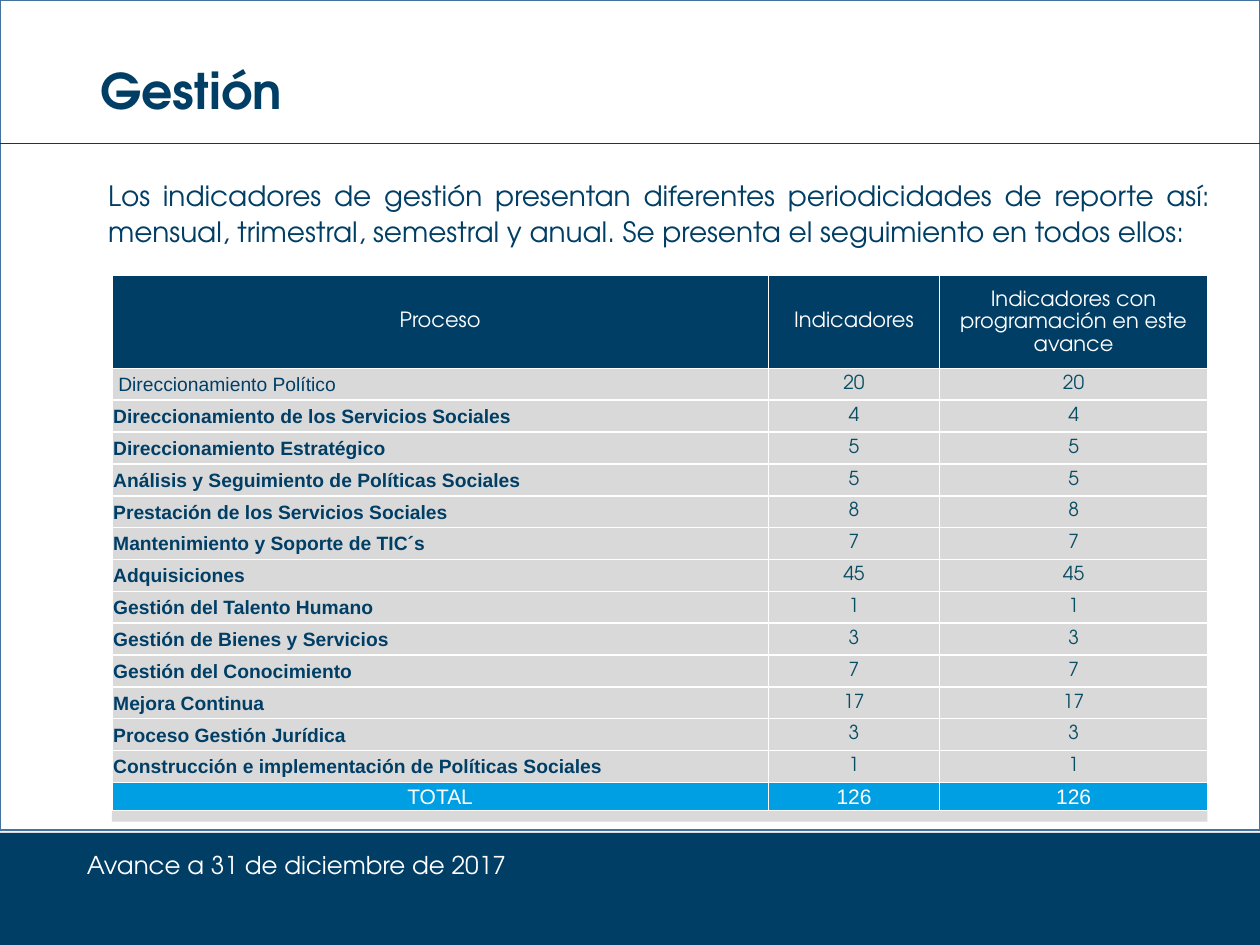
import pptx
import pptx.dml.color
import pptx.enum.shapes
import pptx.enum.text
import pptx.oxml.ns
import pptx.util
from lxml import etree

Pt = pptx.util.Pt
ALIGN = pptx.enum.text.PP_ALIGN
MIDDLE = pptx.enum.text.MSO_ANCHOR.MIDDLE
NAVY, TEAL, BLUE, GREY, WHITE = "003E65", "094D63", "009FE3", "D9D9D9", "FFFFFF"
FONT = "TeX Gyre Adventor"


def paint(target, color):
    """Set a solid fill, or none when no colour is given."""
    if color is None:
        target.background()
        return
    target.solid()
    target.fore_color.rgb = pptx.dml.color.RGBColor.from_string(color)


def write(frame, text, size=12, font=FONT, color=NAVY, bold=False,
          align="LEFT", space=1.0):
    para = frame.paragraphs[0]
    para.alignment = getattr(ALIGN, align)
    para.line_spacing = space
    run = para.add_run()
    run.text = text
    run.font.size = Pt(size)
    run.font.name = font
    run.font.bold = bold
    paint(run.font.fill, color)


class Page:
    def __init__(self, deck):
        self.slide = deck.slides.add_slide(deck.slide_layouts[6])
        self.shapes = self.slide.shapes

    def rect(self, x, y, w, h, fill, line=None):
        kind = pptx.enum.shapes.MSO_SHAPE.RECTANGLE
        shape = self.shapes.add_shape(kind, Pt(x), Pt(y), Pt(w), Pt(h))
        shape.shadow.inherit = False
        paint(shape.fill, fill)
        paint(shape.line.fill, line)
        if line:
            shape.line.width = Pt(1)

    def text(self, x, y, w, h, text, anchor=None, **style):
        frame = self.shapes.add_textbox(Pt(x), Pt(y), Pt(w), Pt(h)).text_frame
        frame.word_wrap = True
        if anchor is not None:
            frame.vertical_anchor = anchor
        write(frame, text, **style)

    def rule(self, x1, y1, x2, y2, color):
        kind = pptx.enum.shapes.MSO_CONNECTOR.STRAIGHT
        line = self.shapes.add_connector(kind, Pt(x1), Pt(y1), Pt(x2), Pt(y2))
        paint(line.line.fill, color)
        line.line.width = Pt(1)
        props = line._element.spPr
        etree.SubElement(props, pptx.oxml.ns.qn("a:effectLst"))

    def table(self, x, y, cols, rows):
        grid = self.shapes.add_table(len(rows), len(cols), Pt(x), Pt(y),
                                     Pt(sum(cols)), Pt(sum(rows))).table
        grid.first_row = grid.horz_banding = False
        for col, width in zip(grid.columns, cols):
            col.width = Pt(width)
        for row, height in zip(grid.rows, rows):
            row.height = Pt(height)
        return grid

    def cell(self, cell, text, fill=None, pad=0.7, sides="LRTB", **style):
        cell.margin_left = cell.margin_right = Pt(pad)
        cell.margin_top = cell.margin_bottom = Pt(0)
        cell.vertical_anchor = MIDDLE
        write(cell.text_frame, text, **style)
        props = cell._tc.get_or_add_tcPr()
        qn = pptx.oxml.ns.qn
        for side in sides:
            edge = etree.SubElement(props, qn("a:ln" + side), w=str(Pt(1)))
            solid = etree.SubElement(edge, qn("a:solidFill"))
            etree.SubElement(solid, qn("a:srgbClr"), val=WHITE)
        paint(cell.fill, fill)


HEADS = ["Proceso", "Indicadores", "Indicadores con programación en este avance"]
DATA = [
    ("Direccionamiento Político", 20),
    ("Direccionamiento de los Servicios Sociales", 4),
    ("Direccionamiento Estratégico", 5),
    ("Análisis y Seguimiento de Políticas Sociales", 5),
    ("Prestación de los Servicios Sociales", 8),
    ("Mantenimiento y Soporte de TIC´s", 7),
    ("Adquisiciones", 45),
    ("Gestión del Talento Humano", 1),
    ("Gestión de Bienes y Servicios", 3),
    ("Gestión del Conocimiento", 7),
    ("Mejora Continua", 17),
    ("Proceso Gestión Jurídica", 3),
    ("Construcción e implementación de Políticas Sociales", 1),
]


def main():
    deck = pptx.Presentation()
    deck.slide_width, deck.slide_height = Pt(720), Pt(540)
    page = Page(deck)

    # Background and footer
    page.rect(0, 0, 720, 535, "F2F2F2")
    page.rect(0, 476, 720, 64, NAVY)
    page.rect(0, 0, 720, 474.5, WHITE, line="43739E")
    page.text(42.5, 482, 254, 29, "Avance a 31 de diciembre de 2017",
              size=14, color=WHITE, align="CENTER")

    # Heading and introduction
    page.rect(64, 157, 626, 312.5, GREY)
    page.text(54.7, 97.2, 644.4, 49,
              "Los indicadores de gestión presentan diferentes periodicidades "
              "de reporte así: mensual, trimestral, semestral y anual. "
              "Se presenta el seguimiento en todos ellos:",
              size=16, align="JUSTIFY", space=1.07)
    page.text(50.4, 27.4, 620.6, 48.2, "Gestión", anchor=MIDDLE,
              size=28, bold=True)
    page.rule(720, 82, 0, 82, NAVY)

    # Table frame
    grid = page.table(64, 157, [375, 98, 153], [53.5] + [18.2] * len(DATA) + [16])
    last = len(DATA) + 1
    total = str(sum(count for _, count in DATA))

    # Heading and total rows
    for col, head in enumerate(HEADS):
        sides = "LRTB" if col else "RTB"
        page.cell(grid.cell(0, col), head, fill=NAVY, pad=3.6, sides=sides,
                  color=WHITE, align="CENTER", space=Pt(13) if col == 2 else 1.07)
        page.cell(grid.cell(last, col), total if col else "TOTAL", fill=BLUE,
                  pad=3.6, sides=sides, font="Arial", color=WHITE,
                  align="CENTER", space=1.07)

    # Process rows
    for row, (name, count) in enumerate(DATA, 1):
        page.cell(grid.cell(row, 0), name, pad=3.6 if row == 1 else 0.7,
                  sides="RTB", size=11, font="Arial", bold=row > 1, space=1.07)
        for col in (1, 2):
            page.cell(grid.cell(row, col), str(count), size=11, color=TEAL,
                      align="CENTER")

    deck.save("out.pptx")


if __name__ == "__main__":
    main()
